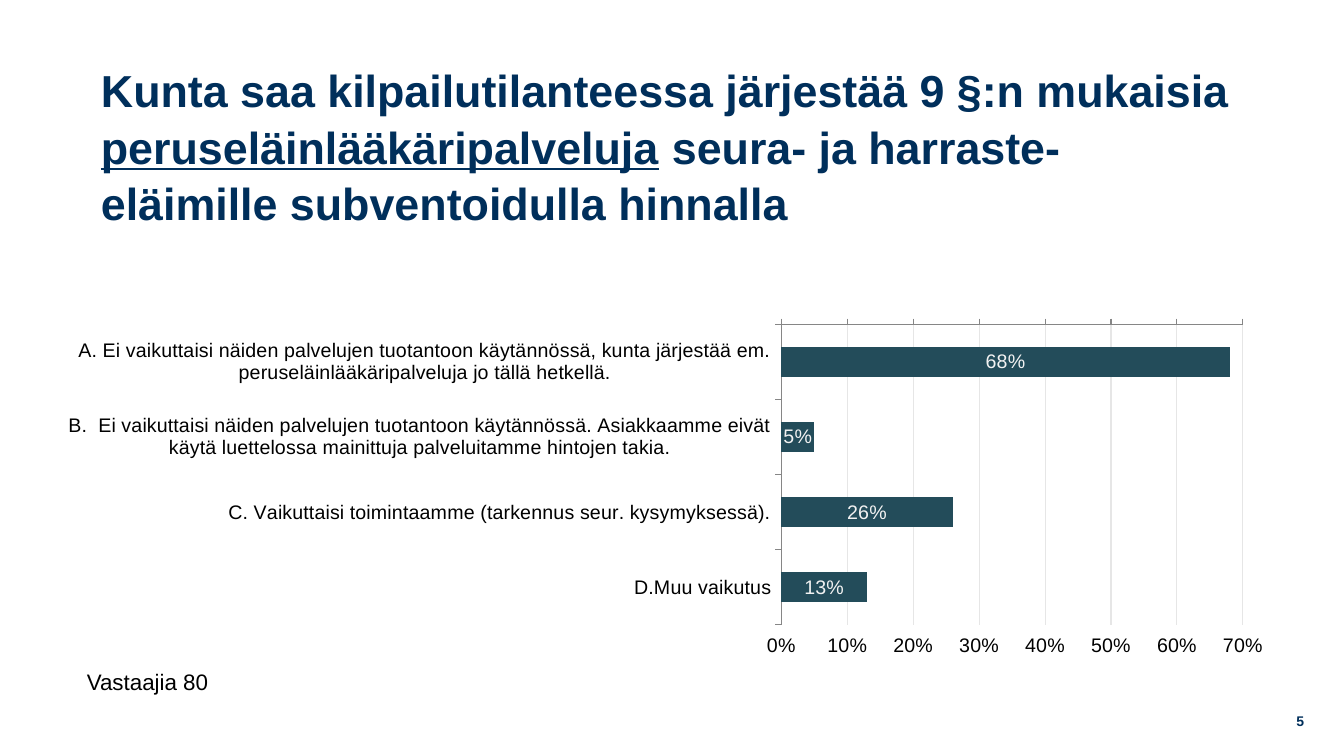
from pptx import Presentation
from pptx.chart.data import CategoryChartData
from pptx.dml.color import RGBColor
from pptx.enum.chart import XL_CHART_TYPE as ChartType
from pptx.enum.chart import XL_LABEL_POSITION as LabelPos
from pptx.enum.chart import XL_TICK_LABEL_POSITION as TickLabels
from pptx.enum.chart import XL_TICK_MARK as Tick
from pptx.enum.text import MSO_ANCHOR as Anchor
from pptx.enum.text import PP_ALIGN as Align
from pptx.oxml import parse_xml
from pptx.oxml.ns import nsdecls
from pptx.util import Pt

PX = 914400 / 100.8
NAVY = RGBColor(0x00, 0x2F, 0x5B)
TEAL = RGBColor(0x23, 0x4C, 0x5A)
BLACK = RGBColor(0x00, 0x00, 0x00)
WHITE = RGBColor(0xFF, 0xFF, 0xFF)
PALE = RGBColor(0xF2, 0xF2, 0xF2)
GRID = RGBColor(0xE6, 0xE6, 0xE6)
AXIS = RGBColor(0x86, 0x86, 0x86)


def emu(*lengths):
    return [round(length * PX) for length in lengths]


def add_text(box, runs, size, color, bold=False, align=Align.LEFT,
             anchor=Anchor.TOP, spacing=1.0):
    frame = slide.shapes.add_textbox(*emu(*box)).text_frame
    frame.word_wrap = True
    frame.vertical_anchor = anchor
    paragraph = frame.paragraphs[0]
    paragraph.alignment = align
    paragraph.line_spacing = spacing
    for text, underline in runs:
        run = paragraph.add_run()
        run.text = text
        style = {"name": "Arial", "size": Pt(size), "bold": bold, "underline": underline}
        for key, value in style.items():
            setattr(run.font, key, value)
        run.font.color.rgb = color


prs = Presentation()
prs.slide_width, prs.slide_height = emu(1344, 756)
slide = prs.slides.add_slide(prs.slide_layouts[6])
slide.background.fill.solid()
slide.background.fill.fore_color.rgb = WHITE

# Title and page number
add_text((91, 72, 1152, 146),
         [("Kunta saa kilpailutilanteessa järjestää 9 §:n mukaisia ", False),
          ("peruseläinlääkäripalveluja", True),
          (" seura- ja harraste-eläimille subventoidulla hinnalla", False)],
         32, NAVY, bold=True, anchor=Anchor.MIDDLE, spacing=1.05)
add_text((1012, 701, 302, 40), [("5", False)], 10, NAVY, bold=True,
         align=Align.RIGHT, anchor=Anchor.MIDDLE)

# Share of answers
answers = {
    "A. Ei vaikuttaisi näiden palvelujen tuotantoon käytännössä, kunta järjestää em. "
    "peruseläinlääkäripalveluja jo tällä hetkellä.": 0.68,
    "B.  Ei vaikuttaisi näiden palvelujen tuotantoon käytännössä. Asiakkaamme eivät "
    "käytä luettelossa mainittuja palveluitamme hintojen takia.": 0.05,
    "C. Vaikuttaisi toimintaamme (tarkennus seur. kysymyksessä).": 0.26,
    "D.Muu vaikutus": 0.13,
}
data = CategoryChartData(number_format="0%")
data.categories = list(answers)
data.add_series("Series 1", list(answers.values()))
chart_box = (45, 318, 1244, 346)
chart = slide.shapes.add_chart(ChartType.BAR_CLUSTERED, *emu(*chart_box), data).chart
chart.has_legend = False
chart.has_title = False
chart.font.name = "Arial"
chart.font.size = Pt(14)
chart.font.color.rgb = BLACK

# Bars and their labels
plot = chart.plots[0]
plot.gap_width = 150
plot.vary_by_categories = False
bars = plot.series[0]
bars.format.fill.solid()
bars.format.fill.fore_color.rgb = TEAL
plot.has_data_labels = True
labels = plot.data_labels
label_style = {"show_value": True, "position": LabelPos.CENTER,
               "number_format": "0%", "number_format_is_linked": False}
for key, value in label_style.items():
    setattr(labels, key, value)
labels.font.name = "Arial"
labels.font.size = Pt(14)
labels.font.color.rgb = PALE

# Axes: answers run downwards, percentages stand below
answer_axis, share_axis = chart.category_axis, chart.value_axis
answer_axis.reverse_order = True
answer_axis.has_major_gridlines = False
share_style = {"minimum_scale": 0, "maximum_scale": 0.7, "major_unit": 0.1,
               "has_major_gridlines": True, "tick_label_position": TickLabels.HIGH}
for key, value in share_style.items():
    setattr(share_axis, key, value)
share_axis.tick_labels.number_format = "0%"
share_axis.tick_labels.number_format_is_linked = False
for axis in (answer_axis, share_axis):
    axis.major_tick_mark = Tick.OUTSIDE
    axis.minor_tick_mark = Tick.NONE
    axis.format.line.color.rgb = AXIS
    axis.format.line.width = Pt(0.75)
gridline = share_axis.major_gridlines.format.line
gridline.color.rgb = GRID
gridline.width = Pt(0.75)

# Fixed place of the bars inside the chart
left, top, width, height = chart_box
inner = {"x": (782 - left) / width, "y": (324 - top) / height,
         "w": 461 / width, "h": 301 / height}
edges = "".join(f'<c:{key}Mode val="edge"/>' for key in "xy")
places = "".join(f'<c:{key} val="{value:.3f}"/>' for key, value in inner.items())
plot_area = chart.element.chart.plotArea
for old in plot_area.findall("{*}layout"):
    plot_area.remove(old)
plot_area.insert(0, parse_xml(
    f'<c:layout {nsdecls("c")}><c:manualLayout><c:layoutTarget val="inner"/>'
    f'{edges}{places}</c:manualLayout></c:layout>'))

# Number of respondents
add_text((77, 663, 150, 37), [("Vastaajia 80", False)], 16, BLACK)

prs.save("out.pptx")
